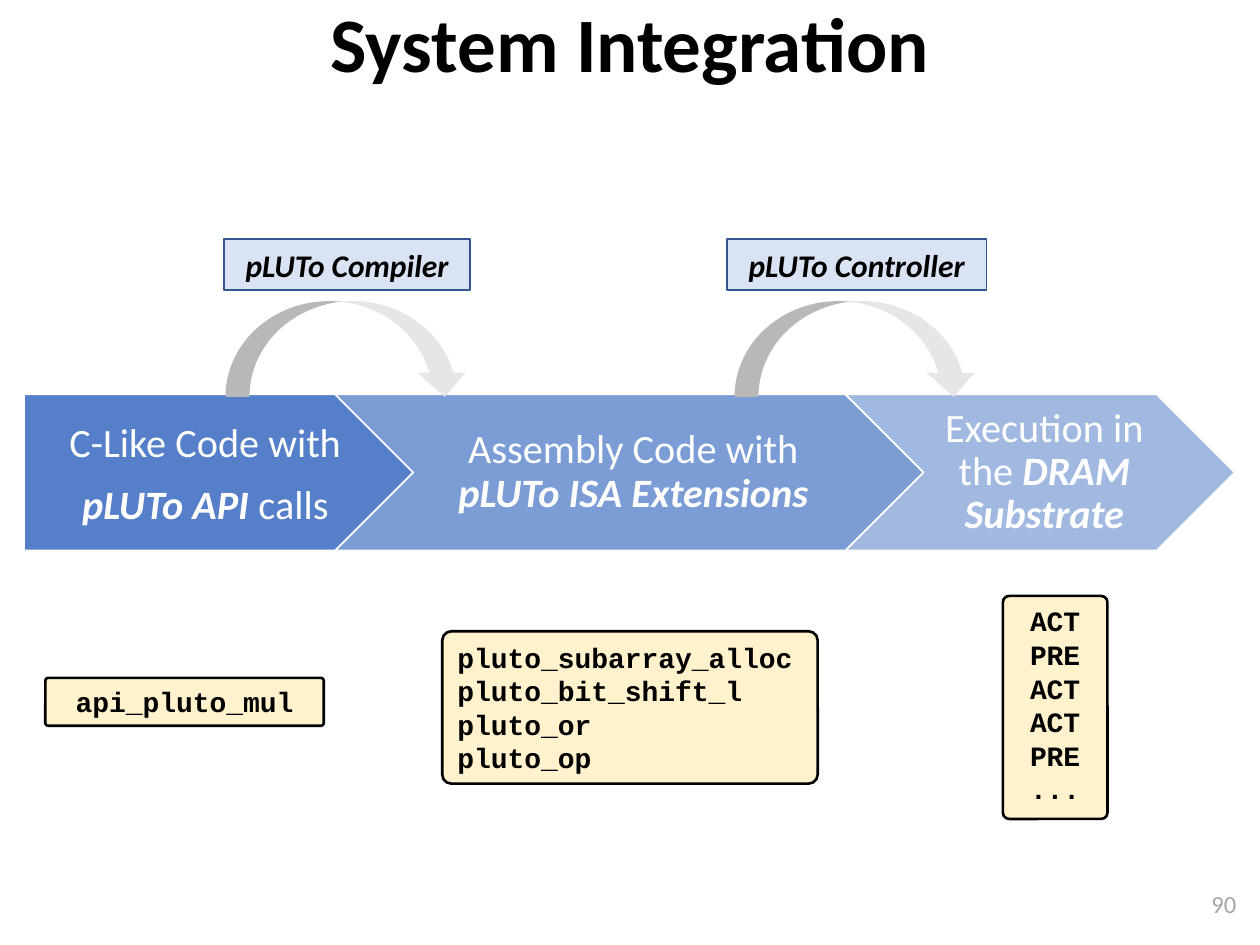
import pptx
import pptx.dml.color
import pptx.enum.shapes
import pptx.enum.text
import pptx.oxml
import pptx.oxml.ns
import pptx.util

PX = 9144
SHAPE = pptx.enum.shapes.MSO_SHAPE
ALIGN = pptx.enum.text.PP_ALIGN
ANCHOR = pptx.enum.text.MSO_ANCHOR
AUTO = pptx.enum.text.MSO_AUTO_SIZE

COLORS = {
    "black": "000000",
    "white": "FFFFFF",
    "blue": "4472C4",
    "label": "DAE3F3",
    "label_line": "325491",
    "arrow": "E7E6E6",
    "code": "FFF2CC",
    "number": "A6A6A6",
}


def rgb(name):
    return pptx.dml.color.RGBColor.from_string(COLORS[name])


def emu(box):
    return [pptx.util.Emu(v * PX) for v in box]


def write(sp, paragraphs, size=18, font="Calibri", color="black", bold=False,
          italic=False, align=ALIGN.CENTER, anchor=ANCHOR.TOP, spacing=None,
          after=None, insets=(10, 5, 10, 5), wrap=True, grow=False):
    tf = sp.text_frame
    tf.word_wrap = wrap
    tf.auto_size = AUTO.SHAPE_TO_FIT_TEXT if grow else AUTO.NONE
    tf.vertical_anchor = anchor
    tf.margin_left, tf.margin_top, tf.margin_right, tf.margin_bottom = emu(insets)
    for i, runs in enumerate(paragraphs):
        p = tf.paragraphs[0] if i == 0 else tf.add_paragraph()
        p.alignment = align
        if spacing:
            p.line_spacing = spacing
        if after:
            p.space_after = pptx.util.Pt(after)
        for text, strong in [(runs, False)] if isinstance(runs, str) else runs:
            if text == "\n":
                p.add_line_break()
                continue
            r = p.add_run()
            r.text = text
            r.font.size = pptx.util.Pt(size)
            r.font.name = font
            r.font.bold = bold or strong
            r.font.italic = italic or strong
            r.font.color.rgb = rgb(color)


def add_text(s, box, paragraphs, **fmt):
    write(s.shapes.add_textbox(*emu(box)), paragraphs, **fmt)


def add_shape(s, kind, box, fill, line=None, width=1, alpha=None):
    sp = s.shapes.add_shape(kind, *emu(box))
    sp.shadow.inherit = False
    sp.fill.solid()
    sp.fill.fore_color.rgb = rgb(fill)
    if alpha:
        clr = sp.fill._xPr.find(".//" + pptx.oxml.ns.qn("a:srgbClr"))
        clr.append(pptx.oxml.parse_xml(
            f'<a:alpha {pptx.oxml.ns.nsdecls("a")} val="{alpha * 1000}"/>'))
    if line:
        sp.line.color.rgb = rgb(line)
        sp.line.width = pptx.util.Pt(width)
    else:
        sp.line.fill.background()
    return sp


def add_stage(s, box, kind, alpha, paragraphs, **fmt):
    x, y, w, h = box
    add_shape(s, kind, box, "blue", "white", alpha=alpha)
    tip = h // 2
    left = tip if kind == SHAPE.CHEVRON else 0
    right = tip if left else tip // 2
    add_text(s, (x + left, y, w - left - right, h), paragraphs, size=23,
             color="white", anchor=ANCHOR.MIDDLE, after=8, **fmt)


def add_pipeline(s, box):
    x, y, w, h = box
    overlap = h // 2
    stages = [
        (309, SHAPE.PENTAGON, 90,
         ["C-Like Code with", [("pLUTo API ", True), ("calls", False)]],
         {"insets": (13, 7, 3, 7)}),
        (467, SHAPE.CHEVRON, 70,
         [[("Assembly Code with", False), ("\n", False),
           ("pLUTo ISA Extensions", True)]],
         {"insets": (10, 7, 3, 7), "spacing": 0.9}),
        (309, SHAPE.CHEVRON, 50,
         [[("Execution in the ", False), ("DRAM Substrate", True)]],
         {"insets": (10, 7, 3, 7), "spacing": 0.9}),
    ]
    for width, kind, alpha, paragraphs, fmt in stages:
        add_stage(s, (x, y, width, h), kind, alpha, paragraphs, **fmt)
        x += width - overlap


def add_transition(s, box, label, label_x, label_w):
    x, y, w, h = box
    add_shape(s, SHAPE.CURVED_DOWN_ARROW, (x, y + 49, w, h - 49), "arrow")
    sp = add_shape(s, SHAPE.RECTANGLE, (x + label_x, y, label_w, 40),
                   "label", "label_line")
    write(sp, [label], bold=True, italic=True, wrap=False, grow=True)


def add_code(s, box, lines, align=ALIGN.CENTER):
    sp = add_shape(s, SHAPE.ROUNDED_RECTANGLE, box, "code", "black", 1.5)
    sp.adjustments[0] = 0.06
    write(sp, lines, size=16, font="Courier New", bold=True, align=align, grow=True)


def main():
    prs = pptx.Presentation()
    prs.slide_width, prs.slide_height = emu((1000, 750))
    s = prs.slides.add_slide(prs.slide_layouts[6])
    add_text(s, (50, 0, 900, 77), ["System Integration"], size=44, bold=True,
             spacing=0.9)
    add_pipeline(s, (19, 313, 962, 124))
    add_transition(s, (179, 190, 193, 125), "pLUTo Compiler", -1, 195)
    add_transition(s, (583, 190, 193, 125), "pLUTo Controller", -6, 206)
    add_code(s, (36, 538, 221, 38), ["api_pluto_mul"])
    add_code(s, (351, 501, 298, 121),
             ["pluto_subarray_alloc", "pluto_bit_shift_l", "pluto_or", "pluto_op"],
             align=ALIGN.LEFT)
    add_code(s, (796, 473, 83, 177), ["ACT", "PRE", "ACT", "ACT", "PRE", "..."])
    add_text(s, (766, 701, 225, 40), ["90"], size=14, color="number",
             align=ALIGN.RIGHT)
    prs.save("out.pptx")


if __name__ == "__main__":
    main()
